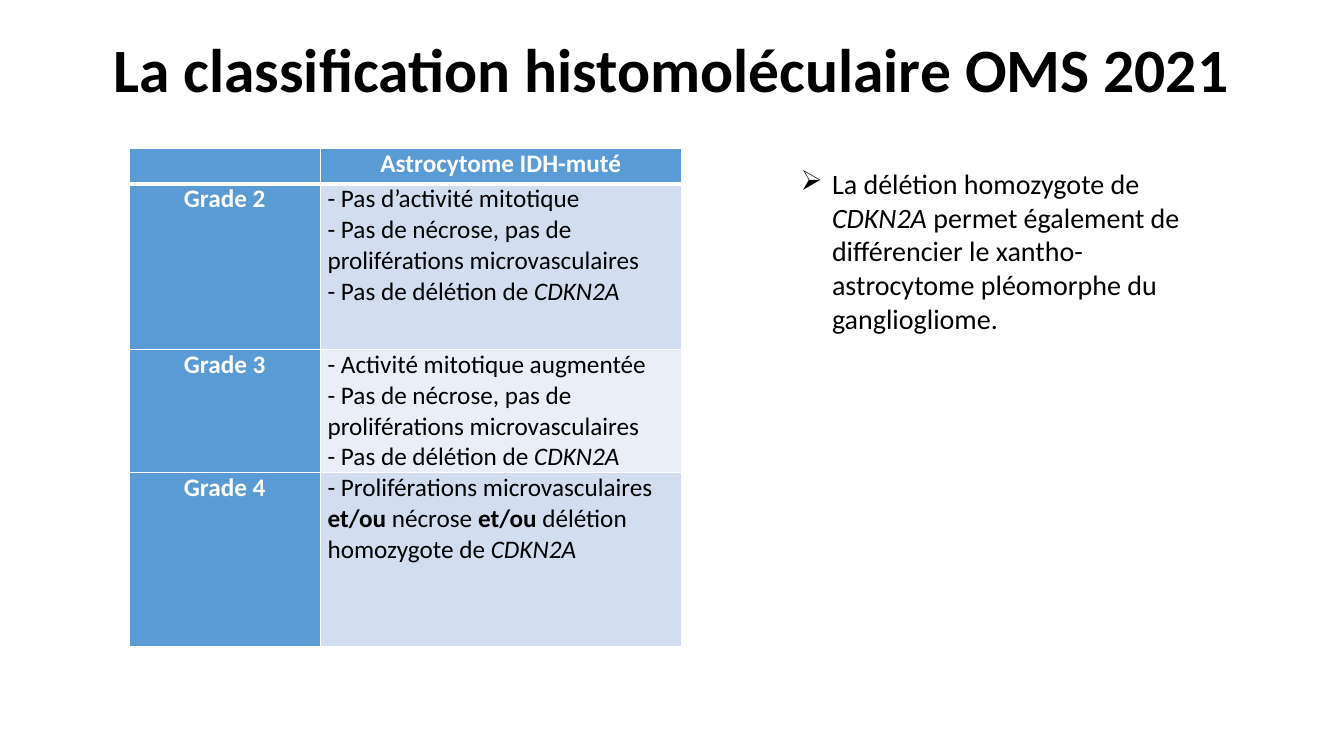
from dataclasses import dataclass

from lxml import etree
from pptx import Presentation
from pptx import util as u
from pptx.dml import color
from pptx.enum import text
from pptx.oxml import ns

EMU_PER_PX = 9525


@dataclass(frozen=True)
class Theme:
    font: str = "Calibri"
    black: str = "000000"
    white: str = "FFFFFF"
    header: str = "5B9BD5"
    bands: tuple[str, str] = ("D2DEEF", "EAEFF7")
    title_pt: int = 44
    note_pt: int = 20
    table_pt: int = 18
    border_pt: int = 1
    header_border_pt: int = 3


@dataclass(frozen=True)
class Span:
    words: str
    bold: bool = False
    italic: bool = False


@dataclass(frozen=True)
class Grade:
    label: str
    height: int
    criteria: tuple[Span, ...]


THEME = Theme()
GENE = Span("CDKN2A", italic=True)
AND_OR = Span("et/ou ", bold=True)
SHARED = "\n- Pas de nécrose, pas de proliférations microvasculaires\n- Pas de délétion de "
TITLE = "La classification histomoléculaire OMS 2021"
TABLE_HEAD = "Astrocytome IDH-muté"
HEAD_HEIGHT = 34
COLUMN_WIDTHS = (182, 344)
GRADES = (
    Grade("Grade 2", 158, (Span("- Pas d’activité mitotique" + SHARED), GENE)),
    Grade("Grade 3", 100, (Span("- Activité mitotique augmentée" + SHARED), GENE)),
    Grade("Grade 4", 166, (
        Span("- Proliférations microvasculaires "), AND_OR, Span("nécrose "),
        AND_OR, Span("délétion homozygote de "), GENE,
    )),
)
NOTE = (
    Span("La délétion homozygote de "),
    GENE,
    Span(" permet également de différencier le xantho-astrocytome pléomorphe du gangliogliome."),
)


def px(n: int) -> u.Emu:
    return u.Emu(n * EMU_PER_PX)


def write(p, spans: tuple[Span, ...], size: int, rgb: str, bold: bool = False) -> None:
    p.font.name = THEME.font
    p.font.size = u.Pt(size)
    p.font.bold = bold
    p.font.color.rgb = color.RGBColor.from_string(rgb)
    for span in spans:
        for i, line in enumerate(span.words.split("\n")):
            if i:
                p.add_line_break()
            r = p.add_run()
            r.text = line
            if span.bold:
                r.font.bold = True
            if span.italic:
                r.font.italic = True


def add_text(slide, left: int, top: int, width: int, height: int):
    tf = slide.shapes.add_textbox(px(left), px(top), px(width), px(height)).text_frame
    tf.word_wrap = True
    return tf


def set_borders(cell, top: int, bottom: int) -> None:
    tc_pr = cell._tc.get_or_add_tcPr()
    sides = {"L": THEME.border_pt, "R": THEME.border_pt, "T": top, "B": bottom}
    for side, points in sides.items():
        ln = etree.SubElement(tc_pr, ns.qn(f"a:ln{side}"), w=str(u.Pt(points)))
        fill = etree.SubElement(ln, ns.qn("a:solidFill"))
        etree.SubElement(fill, ns.qn("a:srgbClr"), val=THEME.white)


def fill_cell(table, row: int, col: int, spans: tuple[Span, ...]) -> None:
    cell = table.cell(row, col)
    heading = row == 0 or col == 0
    thin, thick = THEME.border_pt, THEME.header_border_pt
    set_borders(cell, thick if row == 1 else thin, thick if row == 0 else thin)
    cell.fill.solid()
    rgb = THEME.header if heading else THEME.bands[(row - 1) % 2]
    cell.fill.fore_color.rgb = color.RGBColor.from_string(rgb)
    cell.margin_left = cell.margin_right = px(7)
    cell.margin_top = cell.margin_bottom = 0
    p = cell.text_frame.paragraphs[0]
    p.alignment = text.PP_ALIGN.CENTER if heading else text.PP_ALIGN.LEFT
    p.space_after = u.Pt(10)
    write(p, spans, THEME.table_pt, THEME.white if heading else THEME.black, heading)


def add_grades(slide) -> None:
    heights = (HEAD_HEIGHT, *(grade.height for grade in GRADES))
    table = slide.shapes.add_table(
        len(heights), len(COLUMN_WIDTHS), px(123), px(141),
        px(sum(COLUMN_WIDTHS)), px(sum(heights)),
    ).table
    table.first_row = table.horz_banding = False
    for column, width in zip(table.columns, COLUMN_WIDTHS):
        column.width = px(width)
    for row, height in zip(table.rows, heights):
        row.height = px(height)
    contents = [((), (Span(TABLE_HEAD),))]
    contents += [((Span(grade.label),), grade.criteria) for grade in GRADES]
    for row, cells in enumerate(contents):
        for col, spans in enumerate(cells):
            fill_cell(table, row, col, spans)


def add_title(slide) -> None:
    tf = add_text(slide, 88, 0, 1104, 139)
    tf.vertical_anchor = text.MSO_ANCHOR.MIDDLE
    p = tf.paragraphs[0]
    p.alignment = text.PP_ALIGN.CENTER
    p.line_spacing = 0.9
    write(p, (Span(TITLE),), THEME.title_pt, THEME.black, True)


def add_note(slide) -> None:
    p = add_text(slide, 753, 154, 419, 171).paragraphs[0]
    p_pr = p._p.get_or_add_pPr()
    p_pr.set("marL", str(px(30)))
    p_pr.set("indent", str(px(-30)))
    etree.SubElement(p_pr, ns.qn("a:buChar"), char="➢")
    write(p, NOTE, THEME.note_pt, THEME.black)


def main() -> None:
    prs = Presentation()
    prs.slide_width, prs.slide_height = px(1280), px(720)
    slide = prs.slides.add_slide(prs.slide_layouts[6])
    add_grades(slide)
    add_title(slide)
    add_note(slide)
    prs.save("out.pptx")


if __name__ == "__main__":
    main()
